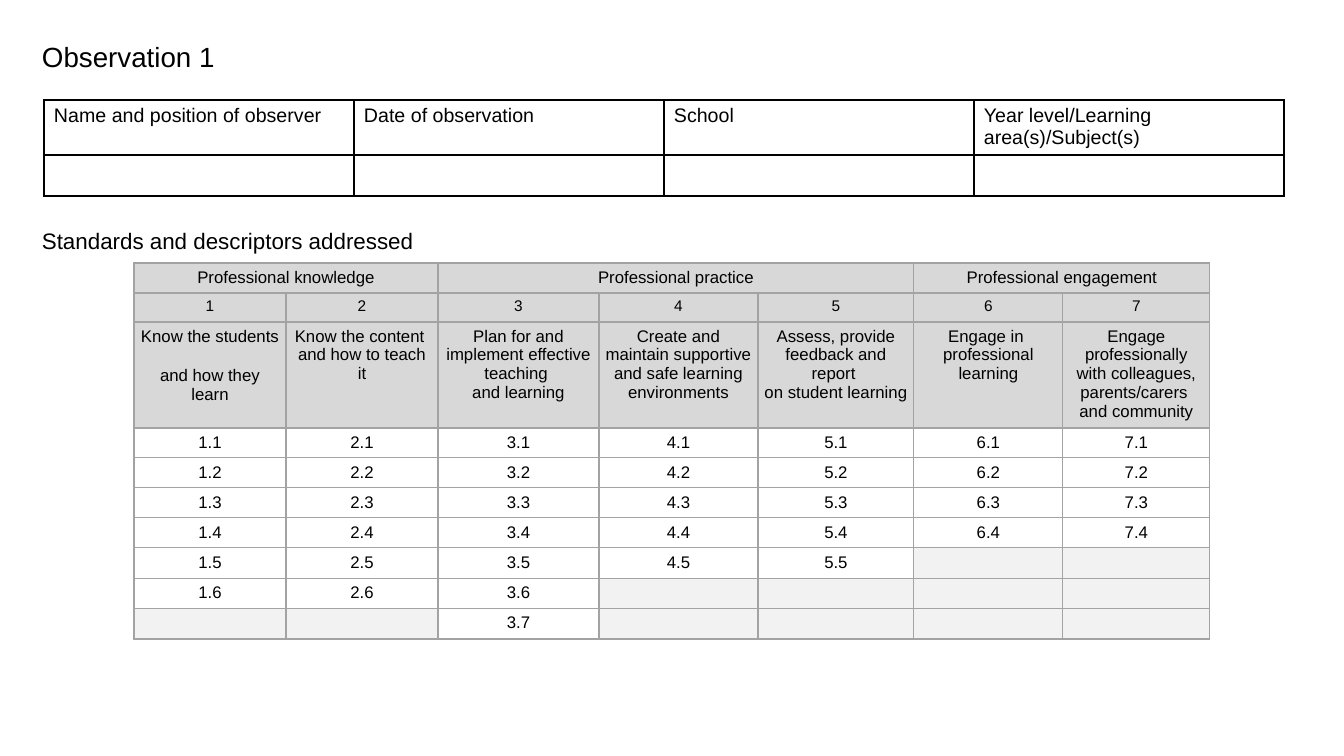
from dataclasses import dataclass

from lxml.etree import SubElement
from pptx import Presentation
from pptx.dml.color import RGBColor
from pptx.enum.text import MSO_ANCHOR, MSO_AUTO_SIZE, PP_ALIGN
from pptx.oxml import parse_xml
from pptx.oxml.ns import nsdecls, qn
from pptx.table import Table, _Cell
from pptx.text.text import TextFrame
from pptx.util import Pt

SCALE = 12192000 / 1344
FONT = "Arial"
COLORS = {"ink": "000000", "rule": "A3A3A3", "head": "D8D8D8", "blank": "F2F2F2"}


@dataclass
class Grid:
    left: int
    top: int
    cols: list[int]
    rows: list[int]
    rule: str
    side: int


@dataclass
class Standard:
    name: str
    count: int
    width: int


@dataclass
class Domain:
    name: str
    first: int
    last: int


STANDARDS = [
    Standard("Know the students \vand how they learn", 6, 152),
    Standard("Know the content \vand how to teach it", 6, 152),
    Standard("Plan for and implement effective teaching \vand learning", 7, 161),
    Standard("Create and maintain supportive and safe learning environments", 5, 159),
    Standard("Assess, provide feedback and report \von student learning", 5, 156),
    Standard("Engage in \vprofessional learning", 4, 149),
    Standard("Engage professionally with colleagues, parents/carers \vand community", 4, 147),
]
DOMAINS = [
    Domain("Professional knowledge", 0, 1),
    Domain("Professional practice", 2, 4),
    Domain("Professional engagement", 5, 6),
]
FIELDS = [
    "Name and position of observer",
    "Date of observation",
    "School",
    "Year level/Learning area(s)/Subject(s)",
]


def px(size: int) -> int:
    return round(size * SCALE)


def write(frame: TextFrame, text: str, size: float,
          align: PP_ALIGN = PP_ALIGN.LEFT, space: float = 1.0) -> None:
    frame.text = text
    line = frame.paragraphs[0]
    line.alignment = align
    line.line_spacing = space
    for run in line.runs:
        run.font.name = FONT
        run.font.size = Pt(size)
        run.font.color.rgb = RGBColor.from_string(COLORS["ink"])
    points = str(round(size * 100))
    for gap in line._p.findall(qn("a:br")):
        SubElement(gap, qn("a:rPr"), sz=points)
    if not text:
        SubElement(line._p, qn("a:endParaRPr"), sz=points)


def edge(cell: _Cell, color: str) -> None:
    props = cell._tc.get_or_add_tcPr()
    for spot, side in enumerate(("lnL", "lnR", "lnT", "lnB")):
        props.insert(spot, parse_xml(
            f'<a:{side} {nsdecls("a")} w="12700"><a:solidFill>'
            f'<a:srgbClr val="{color}"/></a:solidFill></a:{side}>'))


def paint(cell: _Cell, color: str) -> None:
    cell.fill.solid()
    cell.fill.fore_color.rgb = RGBColor.from_string(COLORS[color])


def build(slide, grid: Grid) -> Table:
    frame = slide.shapes.add_table(
        len(grid.rows), len(grid.cols), px(grid.left), px(grid.top),
        px(sum(grid.cols)), px(sum(grid.rows)))
    table = frame.table
    table.first_row = False
    table.horz_banding = False
    for col, width in zip(table.columns, grid.cols):
        col.width = px(width)
    for row, height in zip(table.rows, grid.rows):
        row.height = px(height)
    for cell in table.iter_cells():
        cell.margin_left = cell.margin_right = px(grid.side)
        cell.margin_top = cell.margin_bottom = px(5)
        cell.fill.background()
        edge(cell, COLORS[grid.rule])
    return table


def place(shape, left: int, top: int, width: int, height: int) -> TextFrame:
    shape.left, shape.top = px(left), px(top)
    shape.width, shape.height = px(width), px(height)
    frame = shape.text_frame
    frame.word_wrap = True
    frame.auto_size = MSO_AUTO_SIZE.NONE
    frame.vertical_anchor = MSO_ANCHOR.TOP
    frame.margin_left = frame.margin_right = px(10)
    frame.margin_top = frame.margin_bottom = px(5)
    return frame


def chart(slide) -> None:
    most = max(item.count for item in STANDARDS)
    table = build(slide, Grid(134, 263, [item.width for item in STANDARDS],
                              [30, 29, 106] + [30] * most, "rule", 6))
    for part in DOMAINS:
        cell = table.cell(0, part.first)
        cell.merge(table.cell(0, part.last))
        paint(cell, "head")
        write(cell.text_frame, part.name, 12, PP_ALIGN.CENTER)
    for col, item in enumerate(STANDARDS):
        for row, text, size in ((1, str(col + 1), 11), (2, item.name, 12)):
            cell = table.cell(row, col)
            paint(cell, "head")
            write(cell.text_frame, text, size, PP_ALIGN.CENTER)
        for step in range(1, most + 1):
            cell = table.cell(step + 2, col)
            text = f"{col + 1}.{step}" if step <= item.count else ""
            if not text:
                paint(cell, "blank")
            write(cell.text_frame, text, 12, PP_ALIGN.CENTER)


def form(slide) -> None:
    table = build(slide, Grid(44, 100, [310] * len(FIELDS), [55, 41], "ink", 10))
    for col, name in enumerate(FIELDS):
        write(table.cell(0, col).text_frame, name, 14)
        write(table.cell(1, col).text_frame, "", 14)


def main() -> None:
    deck = Presentation()
    deck.slide_width, deck.slide_height = px(1344), px(756)
    slide = deck.slides.add_slide(deck.slide_layouts.get_by_name("Title Only"))
    title = place(slide.shapes.title, 32, 39, 1159, 76)
    write(title, "Observation 1", 19.8, space=0.9)
    label = place(slide.shapes.add_textbox(0, 0, 0, 0), 32, 225, 1280, 36)
    write(label, "Standards and descriptors addressed", 16, space=0.9)
    chart(slide)
    form(slide)
    deck.save("out.pptx")


if __name__ == "__main__":
    main()
